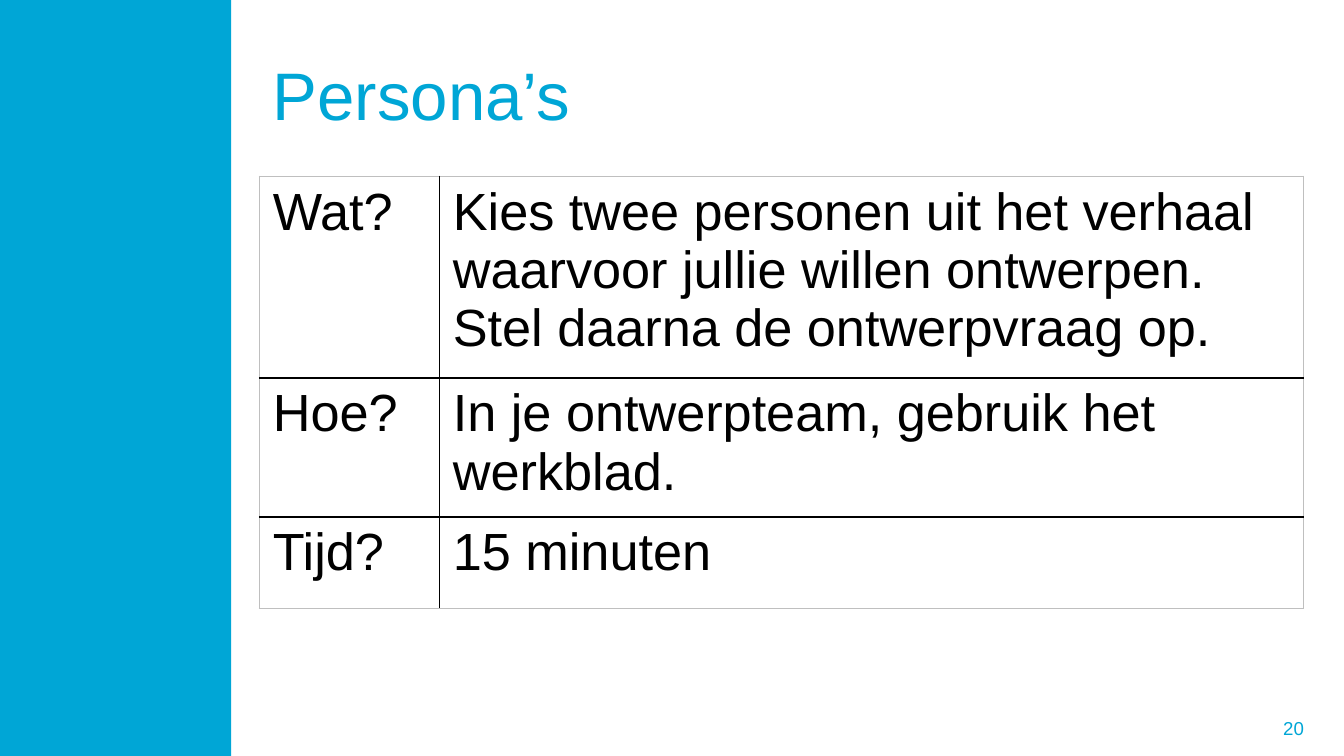
import dataclasses

import lxml.etree
import pptx
import pptx.dml.color
import pptx.enum.shapes
import pptx.enum.text
import pptx.oxml.ns
import pptx.util

Inches = pptx.util.Inches
Pt = pptx.util.Pt
Color = pptx.dml.color.RGBColor.from_string
Align = pptx.enum.text.PP_ALIGN
Anchor = pptx.enum.text.MSO_ANCHOR
qn = pptx.oxml.ns.qn


@dataclasses.dataclass(frozen=True)
class Theme:
    font: str = "Arial"
    accent: str = "00A6D6"
    ink: str = "000000"
    frame: str = "BFBFBF"
    title_size: int = 36
    table_size: int = 28
    number_size: int = 10
    divider_width: float = 1
    frame_width: float = 0.5


THEME = Theme()
WIDTH = 10
HEIGHT = WIDTH * 9 / 16
CONTENT_LEFT, CONTENT_WIDTH = 1.93, 7.77

TABLE_HEIGHT = 3.21
COLUMN_WIDTHS = (1.34, 6.43)
ROW_HEIGHTS = (1.17, 0.68, 0.68)  # rows grow to fit their text
ASSIGNMENT = (
    ("Wat?", "Kies twee personen uit het verhaal waarvoor jullie willen ontwerpen.\n"
             "Stel daarna de ontwerpvraag op."),
    ("Hoe?", "In je ontwerpteam, gebruik het werkblad."),
    ("Tijd?", "15 minuten"),
)


def write_text(frame, text, *, size, color, align=Align.LEFT):
    """Fill a text frame, one paragraph for each line of text."""
    frame.word_wrap = True
    frame.text = text
    for para in frame.paragraphs:
        para.alignment = align
        for span in para.runs:
            span.font.name = THEME.font
            span.font.size = Pt(size)
            span.font.color.rgb = Color(color)


def add_label(page, text, left, top, width, height, **text_format):
    box = page.shapes.add_textbox(Inches(left), Inches(top), Inches(width), Inches(height))
    box.text_frame.vertical_anchor = Anchor.MIDDLE
    write_text(box.text_frame, text, **text_format)


def add_side_band(page, width):
    band = page.shapes.add_shape(
        pptx.enum.shapes.MSO_SHAPE.RECTANGLE, 0, 0, Inches(width), Inches(HEIGHT))
    band.shadow.inherit = False
    band.fill.solid()
    band.fill.fore_color.rgb = Color(THEME.accent)
    band.line.fill.background()


def set_cell_borders(cell, outer_sides):
    """Draw light lines on the outer sides and dark dividers on the others."""
    properties = cell._tc.get_or_add_tcPr()
    for side in "LRTB":
        outer = side in outer_sides
        width = THEME.frame_width if outer else THEME.divider_width
        line = lxml.etree.SubElement(properties, qn(f"a:ln{side}"), w=str(int(Pt(width))))
        fill = lxml.etree.SubElement(line, qn("a:solidFill"))
        lxml.etree.SubElement(
            fill, qn("a:srgbClr"), val=THEME.frame if outer else THEME.ink)


def add_assignment_table(page, top):
    row_count, column_count = len(ROW_HEIGHTS), len(COLUMN_WIDTHS)
    holder = page.shapes.add_table(
        row_count, column_count, Inches(CONTENT_LEFT), Inches(top),
        Inches(CONTENT_WIDTH), Inches(TABLE_HEIGHT))
    table = holder.table
    table.first_row = False
    table.horz_banding = False
    for column, width in zip(table.columns, COLUMN_WIDTHS):
        column.width = Inches(width)
    for row, height in zip(table.rows, ROW_HEIGHTS):
        row.height = Inches(height)
    holder.height = Inches(TABLE_HEIGHT)

    for row, texts in enumerate(ASSIGNMENT):
        for column, text in enumerate(texts):
            cell = table.cell(row, column)
            edges = {"L": column == 0, "R": column == column_count - 1,
                     "T": row == 0, "B": row == row_count - 1}
            set_cell_borders(cell, [side for side, outer in edges.items() if outer])
            cell.fill.background()
            write_text(cell.text_frame, text, size=THEME.table_size, color=THEME.ink)


def main():
    deck = pptx.Presentation()
    deck.slide_width, deck.slide_height = Inches(WIDTH), Inches(HEIGHT)
    page = deck.slides.add_slide(deck.slide_layouts[6])

    add_label(page, "20", 7.27, 5.27, 2.53, 0.3,
              size=THEME.number_size, color=THEME.accent, align=Align.RIGHT)
    add_side_band(page, 1.72)
    add_label(page, "Persona’s", CONTENT_LEFT, 0.23, CONTENT_WIDTH, 0.94,
              size=THEME.title_size, color=THEME.accent)
    add_assignment_table(page, 1.31)

    deck.save("out.pptx")


if __name__ == "__main__":
    main()
